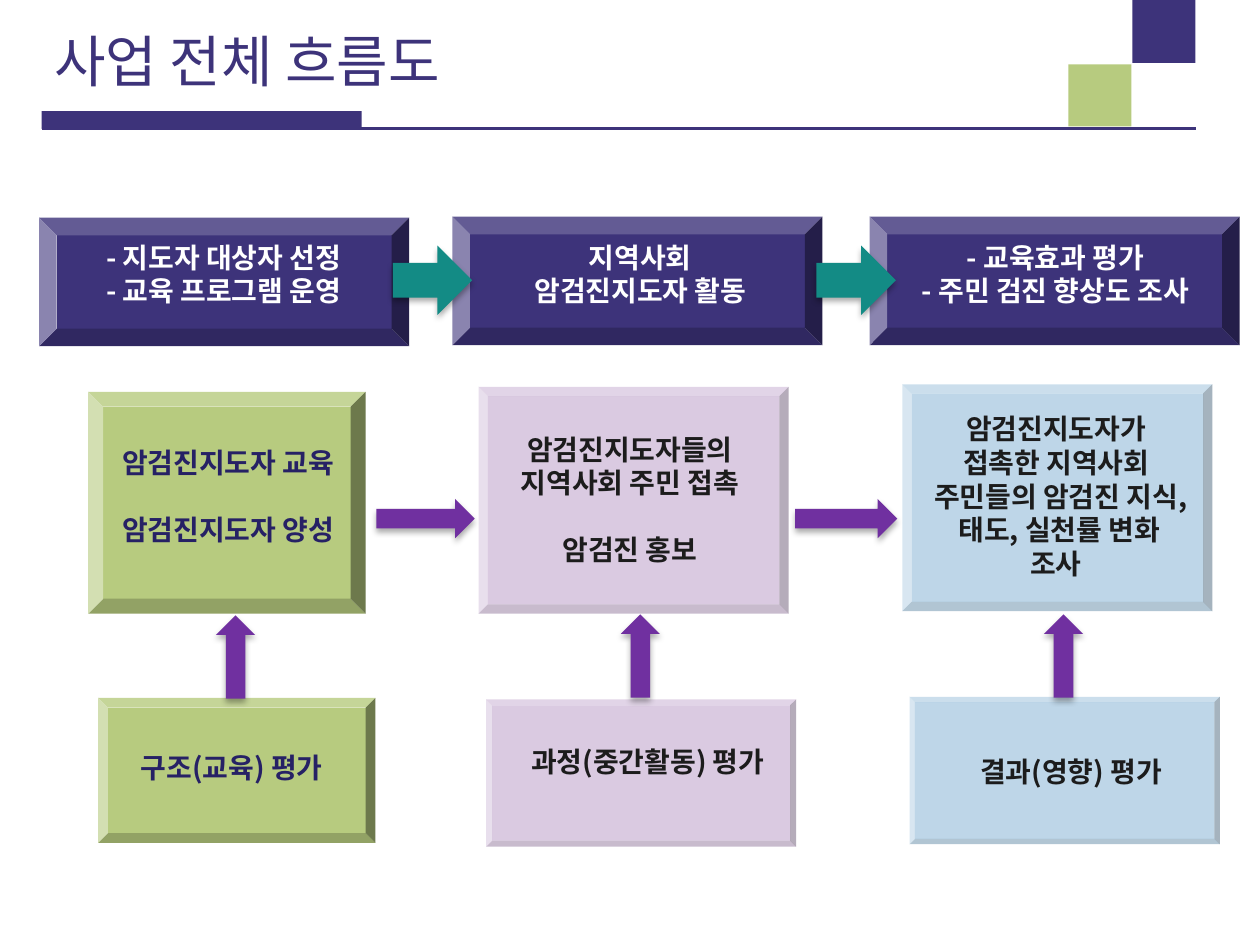
import pptx
import pptx.dml.color
import pptx.enum.shapes
import pptx.enum.text
import pptx.oxml
import pptx.oxml.ns
import pptx.util
from pptx.util import Cm

FONT = "Noto Sans CJK KR"
NAVY, GREEN, LILAC, BLUE = "3D337A", "B7CB7F", "B797C5", "7FAFD3"
TEAL, PURPLE, WHITE, INK, DARK_BLUE = "138B85", "7030A0", "FFFFFF", "1C1C1C", "262165"
MSO = pptx.enum.shapes.MSO_SHAPE
A = 'xmlns:a="http://schemas.openxmlformats.org/drawingml/2006/main"'
SHADOW = (f'<a:effectLst {A}><a:outerShdw blurRad="44450" dist="27940" dir="5400000" rotWithShape="0">'
          '<a:srgbClr val="000000"><a:alpha val="32000"/></a:srgbClr></a:outerShdw></a:effectLst>')


def rgb(color):
    return pptx.dml.color.RGBColor.from_string(color)


def add_filled(kind, x, y, w, h, color):
    """Add a borderless solid shape; lengths are in centimetres."""
    s = slide.shapes.add_shape(kind, Cm(x), Cm(y), Cm(w), Cm(h))
    s.shadow.inherit = False
    s.fill.solid()
    s.fill.fore_color.rgb = rgb(color)
    s.line.fill.background()
    return s


prs = pptx.Presentation()
prs.slide_width, prs.slide_height = Cm(25.4), Cm(19.05)
slide = prs.slides.add_slide(prs.slide_layouts[5])

# Title and decoration
title = slide.shapes.title
title.left, title.top, title.width, title.height = Cm(0.84), Cm(0.43), Cm(17.15), Cm(1.57)
tf = title.text_frame
tf.text = "사업 전체 흐름도"
tf.vertical_anchor = pptx.enum.text.MSO_ANCHOR.MIDDLE
p = tf.paragraphs[0]
p.alignment = pptx.enum.text.PP_ALIGN.LEFT
title_run = p.runs[0]
title_run.font.size = pptx.util.Pt(32)
title_run.font.color.rgb = rgb(NAVY)
runs = [title_run]

for x, y, w, h, color in [(0.84, 2.24, 6.45, 0.36, NAVY),
                          (21.54, 1.3, 1.27, 1.25, GREEN),
                          (22.83, 0, 1.27, 1.27, NAVY)]:
    add_filled(MSO.RECTANGLE, x, y, w, h, color)
rule = slide.shapes.add_connector(pptx.enum.shapes.MSO_CONNECTOR.STRAIGHT,
                                  Cm(0.84), Cm(2.59), Cm(24.1), Cm(2.59))
rule.line.color.rgb = rgb(NAVY)
rule.line.width = pptx.util.Pt(1.5)
rule._element.spPr.append(pptx.oxml.parse_xml(f"<a:effectLst {A}/>"))

# Bevelled boxes: x, y, width, height, bevel depth, colour, opacity in percent
boxes = [
    (0.79, 4.39, 7.46, 2.59, 0.137, NAVY, 100),
    (9.12, 4.37, 7.46, 2.59, 0.137, NAVY, 100),
    (17.53, 4.37, 7.46, 2.59, 0.137, NAVY, 100),
    (1.78, 7.9, 5.59, 4.47, 0.067, GREEN, 100),
    (9.65, 7.8, 6.25, 4.57, 0.041, LILAC, 50),
    (18.19, 7.75, 6.25, 4.57, 0.041, BLUE, 50),
    (1.98, 14.07, 5.59, 2.92, 0.067, GREEN, 100),
    (9.8, 14.1, 6.25, 2.97, 0.041, LILAC, 50),
    (18.34, 14.05, 6.25, 2.97, 0.036, BLUE, 50),
]
for x, y, w, h, depth, color, opacity in boxes:
    s = add_filled(MSO.BEVEL, x, y, w, h, color)
    s.adjustments[0] = depth
    if opacity < 100:
        clr = s._element.spPr.find(".//" + pptx.oxml.ns.qn("a:srgbClr"))
        clr.append(pptx.oxml.parse_xml(f'<a:alpha {A} val="{opacity * 1000}"/>'))

# Labels: x, y, width, height, colour, gap between paragraphs in points, text
labels = [
    (1.4, 4.72, 6.22, 1.63, WHITE, 0, "- 지도자 대상자 선정\n- 교육 프로그램 운영"),
    (9.8, 4.72, 6.22, 1.63, WHITE, 0, "지역사회\n암검진지도자 활동"),
    (17.86, 4.72, 6.83, 1.63, WHITE, 0, "- 교육효과 평가\n- 주민 검진 향상도 조사"),
    (1.88, 8.86, 5.44, 2.31, DARK_BLUE, 19, "암검진지도자 교육\n암검진지도자 양성"),
    (9.98, 8.59, 5.44, 3, INK, 19, "암검진지도자들의 지역사회 주민 접촉\n암검진 홍보"),
    (18.57, 8.18, 5.44, 3.68, INK, 0,
     "암검진지도자가 접촉한 지역사회 주민들의 암검진 지식, 태도, 실천률 변화 조사"),
    (2.08, 15.01, 5.18, 0.94, DARK_BLUE, 0, "구조(교육) 평가"),
    (10.34, 14.88, 5.44, 1.63, INK, 0, "과정(중간활동) 평가"),
    (18.87, 15.09, 5.44, 0.94, INK, 0, "결과(영향) 평가"),
]
for x, y, w, h, color, gap, text in labels:
    tf = slide.shapes.add_textbox(Cm(x), Cm(y), Cm(w), Cm(h)).text_frame
    tf.word_wrap = True
    tf.text = text
    for i, p in enumerate(tf.paragraphs):
        p.alignment = pptx.enum.text.PP_ALIGN.CENTER
        if i and gap:
            p.space_before = pptx.util.Pt(gap)
        r = p.runs[0]
        r.font.size = pptx.util.Pt(16)
        r.font.bold = True
        r.font.color.rgb = rgb(color)
        runs.append(r)

# Latin and East Asian typeface for every run
for r in runs:
    r.font.name = FONT
    r.font._element.find(pptx.oxml.ns.qn("a:latin")).addnext(
        pptx.oxml.parse_xml(f'<a:ea {A} typeface="{FONT}"/>'))

# Arrows: x, y, width, height, colour, rotation
arrows = [
    (7.92, 4.95, 1.6, 1.4, TEAL, 0),
    (16.46, 4.95, 1.6, 1.4, TEAL, 0),
    (7.59, 10.06, 1.98, 0.79, PURPLE, 0),
    (16.03, 10.06, 2.06, 0.79, PURPLE, 0),
    (3.91, 12.85, 1.68, 0.79, PURPLE, 270),
    (12.07, 12.83, 1.68, 0.79, PURPLE, 270),
    (20.6, 12.83, 1.68, 0.79, PURPLE, 270),
]
for x, y, w, h, color, rotation in arrows:
    s = add_filled(MSO.RIGHT_ARROW, x, y, w, h, color)
    s.rotation = rotation
    spPr = s._element.spPr
    spPr.replace(spPr.find(pptx.oxml.ns.qn("a:effectLst")), pptx.oxml.parse_xml(SHADOW))

prs.save("out.pptx")
